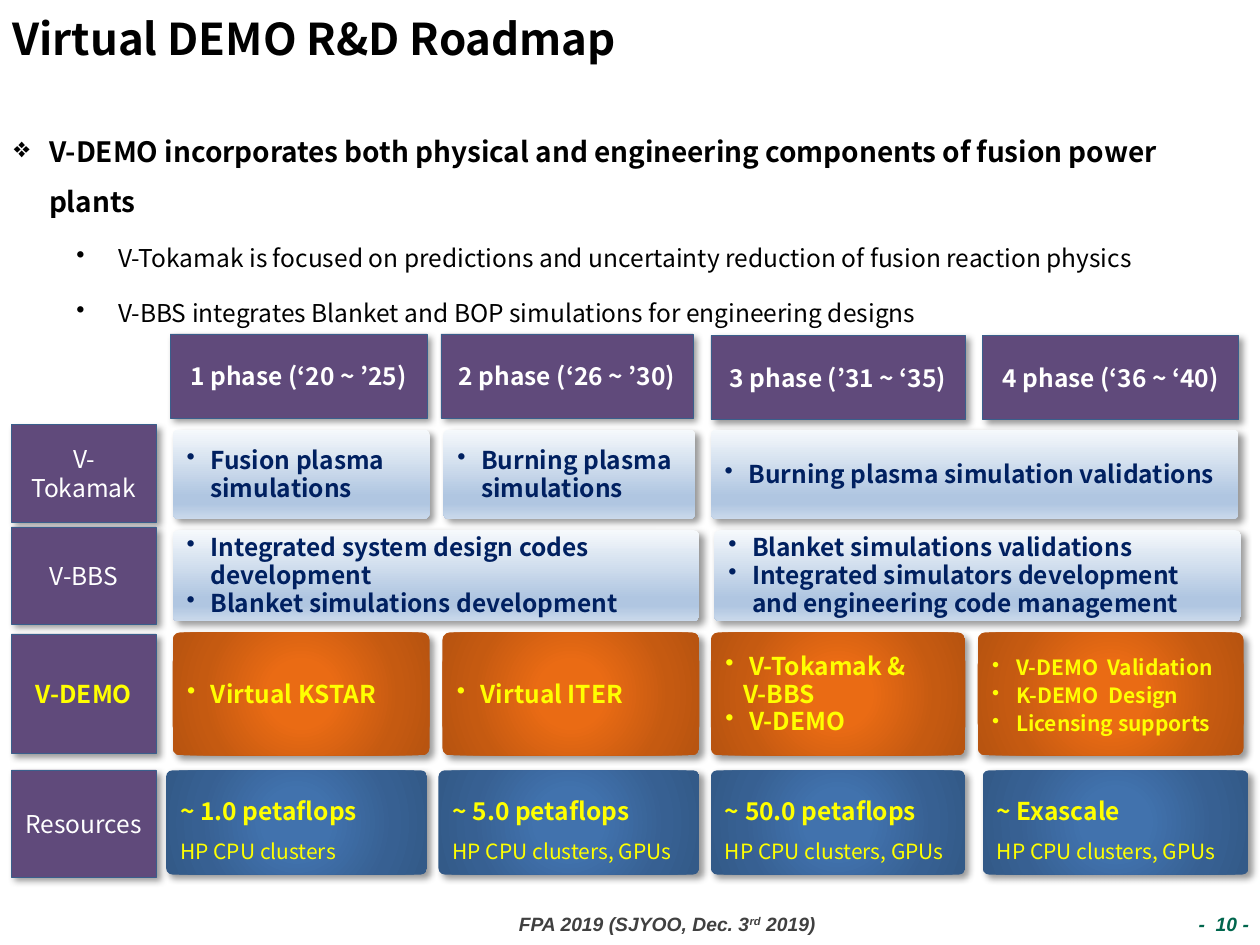
from dataclasses import dataclass

from lxml import etree
from pptx import Presentation
from pptx.dml.color import RGBColor
from pptx.enum.shapes import MSO_SHAPE
from pptx.enum.text import MSO_ANCHOR, MSO_AUTO_SIZE, PP_ALIGN
from pptx.oxml.ns import qn
from pptx.util import Cm, Pt

RECT, ROUNDED = MSO_SHAPE.RECTANGLE, MSO_SHAPE.ROUNDED_RECTANGLE
TOP, MIDDLE = MSO_ANCHOR.TOP, MSO_ANCHOR.MIDDLE
LEFT, CENTER, RIGHT = PP_ALIGN.LEFT, PP_ALIGN.CENTER, PP_ALIGN.RIGHT
NO_FIT = MSO_AUTO_SIZE.NONE

FONT, FOOTER_FONT = "Noto Sans CJK KR", "Arial"
COLORS = {
    "black": "000000", "white": "FFFFFF", "yellow": "FFFF00", "navy": "002060",
    "purple": "604A7B", "outline": "3A5F8C", "gray": "404040", "green": "00664D",
}
# Gradient stops as (percent, colour); None as angle means circular
GRADIENTS = {
    "light": (90, [(0, "F6F9FC"), (74, "B0C6E1"), (83, "B0C6E1"), (100, "CAD9EB")]),
    "orange": (None, [(0, "EA6B14"), (23, "EA6B14"), (69, "C55A11"), (97, "B85410")]),
    "blue": (None, [(0, "4172AD"), (23, "4172AD"), (69, "376092"), (97, "335A88")]),
}


@dataclass
class Line:
    text: str
    size: float = 14
    bold: bool = True
    color: str = "yellow"
    bullet: str = ""
    indent: float = 0
    hang: float = 0
    spacing: object = None
    before: float = 0
    level: int = 0
    align: object = LEFT


def point(text, color="yellow", size=14):
    """A bulleted line of a plan cell."""
    return Line(text, size, color=color, bullet="•", indent=0.48, hang=0.48, spacing=Pt(16))


def resource(amount, machines):
    return [Line(amount, spacing=1.5), Line(machines, 12, False, spacing=1.5)]


# Columns are (left, width) in cm from the left of the roadmap
PHASES = [
    ("1 phase (‘20 ~ ’25)", 3.2, 5.18, 0), ("2 phase (‘26 ~ ’30)", 8.66, 5.08, 0),
    ("3 phase (’31 ~ ‘35)", 14.1, 5.13, 0.03), ("4 phase (‘36 ~ ‘40)", 19.58, 5.16, 0.03),
]
# Row: label, label top and height, cell top and height, gradient, cells (left, width, lines)
ROWS = [
    (Line("V-Tokamak", bold=False, color="white"), 1.83, 1.96, 1.93, 1.8, "light", [
        (3.25, 5.18, [point("Fusion plasma simulations", "navy")]),
        (8.71, 5.08, [point("Burning plasma simulations", "navy")]),
        (14.1, 10.64, [point("Burning plasma simulation validations", "navy")]),
    ]),
    (Line("V-BBS", bold=False, color="white"), 3.89, 1.96, 3.96, 1.83, "light", [
        (3.25, 10.62, [point("Integrated system design codes development", "navy"),
                       point("Blanket simulations development", "navy")]),
        (14.17, 10.62, [point("Blanket simulations validations", "navy"),
                        point("Integrated simulators development and engineering "
                              "code management", "navy")]),
    ]),
    (Line("V-DEMO"), 6.05, 2.41, 6.02, 2.48, "orange", [
        (3.25, 5.18, [point("Virtual KSTAR")]),
        (8.69, 5.18, [point("Virtual ITER")]),
        (14.1, 5.13, [point("V-Tokamak &"), Line("V-BBS", indent=0.36, spacing=Pt(16)),
                      point("V-DEMO")]),
        (19.48, 5.36, [point(t, size=12) for t in
                       ("V-DEMO  Validation", "K-DEMO  Design", "Licensing supports")]),
    ]),
    (Line("Resources", bold=False, color="white"), 8.79, 2.16, 8.8, 2.1, "blue", [
        (3.12, 5.26, resource("~ 1.0 petaflops", "HP CPU clusters")),
        (8.61, 5.26, resource("~ 5.0 petaflops", "HP CPU clusters, GPUs")),
        (14.1, 5.13, resource("~ 50.0 petaflops", "HP CPU clusters, GPUs")),
        (19.58, 5.36, resource("~ Exascale", "HP CPU clusters, GPUs")),
    ]),
]


def rgb(name):
    return RGBColor.from_string(COLORS[name])


def child(parent, tag, **attrs):
    el = etree.SubElement(parent, qn(tag))
    for key, value in attrs.items():
        el.set(key, str(value))
    return el


def style_run(r, size, bold, color, name=FONT, italic=False):
    f = r.font
    f.name, f.size, f.bold, f.italic = name, Pt(size), bold, italic
    f.color.rgb = rgb(color)


def write_lines(tf, lines, anchor):
    tf.word_wrap = True
    tf.auto_size = NO_FIT
    tf.vertical_anchor = anchor
    for i, line in enumerate(lines):
        p = tf.add_paragraph() if i else tf.paragraphs[0]
        p.text = line.text
        p.alignment, p.level = line.align, line.level
        p.space_before = Pt(line.before)
        if line.spacing:
            p.line_spacing = line.spacing
        pPr = p._p.get_or_add_pPr()
        pPr.set("marL", str(Cm(line.indent)))
        pPr.set("indent", str(-Cm(line.hang)))
        if line.bullet:
            child(pPr, "a:buChar", char=line.bullet)
        style_run(p.runs[0], line.size, line.bold, line.color)


def fill_gradient(sp, name):
    angle, stops = GRADIENTS[name]
    sp.fill.gradient()
    grad = sp._element.spPr.find(qn("a:gradFill"))
    grad.clear()
    grad.set("rotWithShape", "1")
    stop_list = child(grad, "a:gsLst")
    for percent, color in stops:
        child(child(stop_list, "a:gs", pos=percent * 1000), "a:srgbClr", val=color)
    if angle is None:
        circle = child(grad, "a:path", path="circle")
        child(circle, "a:fillToRect", l=50000, t=50000, r=50000, b=50000)
    else:
        child(grad, "a:lin", ang=angle * 60000, scaled=0)


def add_block(slide, x, y, w, h, lines, gradient=None):
    """Shadowed block: rounded with a gradient, or a plain purple rectangle."""
    sp = slide.shapes.add_shape(ROUNDED if gradient else RECT, Cm(x), Cm(y), Cm(w), Cm(h))
    sp.shadow.inherit = False
    if gradient:
        sp.adjustments[0] = 0.06
        fill_gradient(sp, gradient)
        sp.line.fill.background()
    else:
        sp.fill.solid()
        sp.fill.fore_color.rgb = rgb("purple")
        sp.line.color.rgb = rgb("outline")
        sp.line.width = Pt(0.25)
    effects = sp._element.spPr.find(qn("a:effectLst"))
    shadow = child(effects, "a:outerShdw", blurRad=Pt(4), dist=Pt(3), dir=45 * 60000,
                   algn="tl", rotWithShape=0)
    child(child(shadow, "a:srgbClr", val=COLORS["black"]), "a:alpha", val=40000)
    write_lines(sp.text_frame, lines, MIDDLE)


def add_title(slide, x, y, w, h):
    title = slide.shapes.title
    title.left, title.top, title.width, title.height = Cm(x), Cm(y), Cm(w), Cm(h)
    write_lines(title.text_frame, [Line("Virtual DEMO R&D Roadmap", 25, color="black")], MIDDLE)


def add_summary(slide, x, y, w, h):
    box = slide.shapes.add_textbox(Cm(x), Cm(y), Cm(w), Cm(h))
    lines = [Line("V-DEMO incorporates both physical and engineering components of fusion "
                  "power plants", 16, True, "black", "❖", 0.74, 0.71, 1.5)]
    for text in ("V-Tokamak is focused on predictions and uncertainty reduction of fusion "
                 "reaction physics",
                 "V-BBS integrates Blanket and BOP simulations for engineering designs"):
        lines.append(Line(text, 14, False, "black", "•", 2.13, 0.84, 1.5, 6, 1))
    write_lines(box.text_frame, lines, TOP)


def add_roadmap(slide, x, y):
    for text, left, width, drop in PHASES:
        header = Line(text, color="white", align=CENTER)
        add_block(slide, x + left, y + drop, width, 1.7, [header])
    for label, label_top, label_h, top, height, gradient, cells in ROWS:
        label.align = CENTER
        add_block(slide, x, y + label_top, 2.92, label_h, [label])
        for left, width, lines in cells:
            add_block(slide, x + left, y + top, width, height, lines, gradient)


def add_footer(slide, x, y, w, h, parts, color):
    """Right-aligned footer; parts are (text, is_superscript)."""
    tf = slide.shapes.add_textbox(Cm(x), Cm(y), Cm(w), Cm(h)).text_frame
    tf.word_wrap = True
    p = tf.paragraphs[0]
    p.alignment = RIGHT
    for text, superscript in parts:
        r = p.add_run()
        r.text = text
        style_run(r, 11, True, color, FOOTER_FONT, True)
        if superscript:
            r._r.get_or_add_rPr().set("baseline", "30000")


def main():
    prs = Presentation()
    prs.slide_width, prs.slide_height = Cm(25.4), Cm(19.05)
    slide = prs.slides.add_slide(prs.slide_layouts[5])
    add_footer(slide, 9.5, 18.26, 7.19, 0.74,
               [("FPA 2019 (SJYOO, Dec. 3", False), ("rd", True), (" 2019)", False)], "gray")
    add_footer(slide, 23.7, 18.26, 1.73, 0.74, [("-  10 -", False)], "green")
    add_roadmap(slide, 0.23, 6.73)
    add_title(slide, 0, 0.1, 24.23, 1.32)
    add_summary(slide, 0, 2.24, 25.4, 3.38)
    prs.save("out.pptx")


if __name__ == "__main__":
    main()
